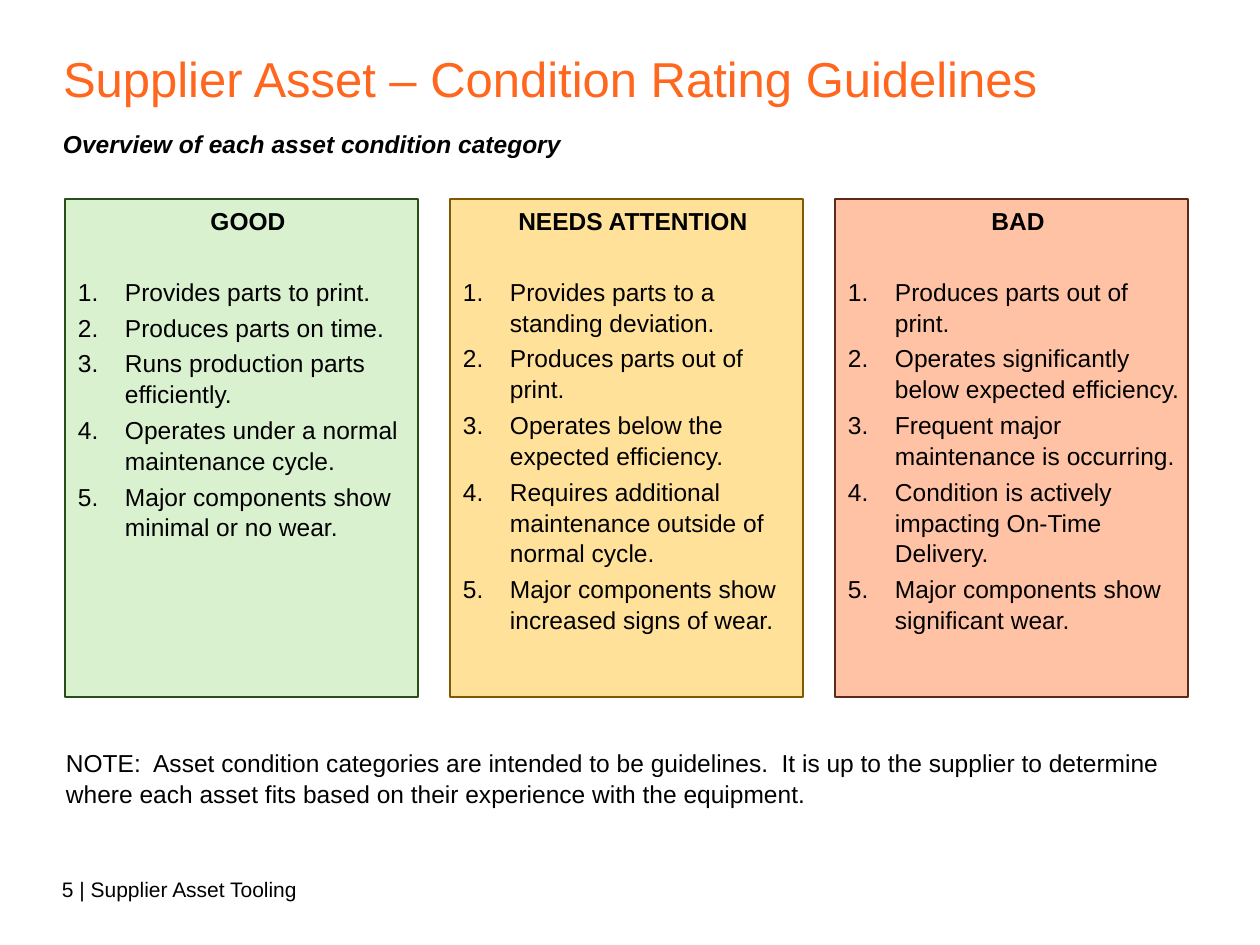
import pptx
import pptx.util
import pptx.dml.color
import pptx.enum.shapes
import pptx.enum.text
import pptx.oxml.ns
import lxml.etree

PX = 914400 / 126
ALIGN = pptx.enum.text.PP_ALIGN
COLORS = {
    "title": "FF671F", "text": "000000",
    "good": "DAF1D0", "good_line": "284F18",
    "attention": "FFE199", "attention_line": "805A00",
    "bad": "FFC2A5", "bad_line": "602818",
}
TEXT_INSETS = (0, 6, 13, 6)
CARD_INSETS = (13, 6, 0, 6)
CARD_LEFT, CARD_STEP = 65, 385
HANGING = 47
BODY = {"size": 14, "color": "text"}
HEADING = {**BODY, "bold": True}
CARDS = [
    ("GOOD", "good", 1.5, [
        "Provides parts to print.",
        "Produces parts on time.",
        "Runs production parts efficiently.",
        "Operates under a normal maintenance cycle.",
        "Major components show minimal or no wear.",
    ]),
    ("NEEDS ATTENTION", "attention", 1.25, [
        "Provides parts to a standing deviation.",
        "Produces parts out of print.",
        "Operates below the expected efficiency.",
        "Requires additional maintenance outside of normal cycle.",
        "Major components show increased signs of wear.",
    ]),
    ("BAD", "bad", 1.25, [
        "Produces parts out of print.",
        "Operates significantly below expected efficiency.",
        "Frequent major maintenance is occurring.",
        "Condition is actively impacting On-Time Delivery.",
        "Major components show significant wear.",
    ]),
]


def px(n):
    """Turn pixels into EMU."""
    return pptx.util.Emu(round(n * PX))


def rgb(name):
    """Return a named colour."""
    return pptx.dml.color.RGBColor.from_string(COLORS[name])


def place(sp, box):
    """Move and size a shape."""
    for name, value in zip(("left", "top", "width", "height"), box):
        setattr(sp, name, px(value))


def set_frame(sp, insets):
    """Set wrapping, anchor and insets of a shape's text."""
    tf = sp.text_frame
    values = {
        "word_wrap": True,
        "auto_size": pptx.enum.text.MSO_AUTO_SIZE.NONE,
        "vertical_anchor": pptx.enum.text.MSO_ANCHOR.TOP,
    }
    sides = ("left", "top", "right", "bottom")
    values.update({f"margin_{side}": px(n) for side, n in zip(sides, insets)})
    for name, value in values.items():
        setattr(tf, name, value)
    return tf


def set_bullet(p, numbered):
    """Give a paragraph a number with a hanging indent, or no bullet."""
    pPr = p._p.get_or_add_pPr()
    indent = px(HANGING) if numbered else 0
    pPr.set("marL", str(indent))
    pPr.set("indent", str(-indent))
    tag = "a:buAutoNum" if numbered else "a:buNone"
    bullet = lxml.etree.SubElement(pPr, pptx.oxml.ns.qn(tag))
    if numbered:
        bullet.set("type", "arabicPeriod")


def write(p, text, style, align=ALIGN.LEFT, before=0, spacing=1.05, numbered=False):
    """Fill a paragraph with one formatted run."""
    set_bullet(p, numbered)
    values = {"alignment": align, "space_before": pptx.util.Pt(before),
              "line_spacing": spacing}
    for name, value in values.items():
        setattr(p, name, value)
    r = p.add_run()
    r.text = text
    font = {"name": "Arial", "size": pptx.util.Pt(style["size"]),
            "bold": style.get("bold", False), "italic": style.get("italic", False)}
    for name, value in font.items():
        setattr(r.font, name, value)
    r.font.color.rgb = rgb(style["color"])


def add_title(s, text, box):
    """Fill the title placeholder."""
    sp = s.shapes.title
    place(sp, box)
    tf = set_frame(sp, TEXT_INSETS)
    write(tf.paragraphs[0], text, {"size": 28, "color": "title"}, spacing=1.0)


def add_text(s, text, box, style, spacing=1.05):
    """Add a text box with one paragraph."""
    sp = s.shapes.add_textbox(*map(px, box))
    tf = set_frame(sp, TEXT_INSETS)
    write(tf.paragraphs[0], text, style, spacing=spacing)


def fill_card(sp, box, heading, color, line_width, items):
    """Turn a shape into a coloured card with a heading and a numbered list."""
    place(sp, box)
    sp.fill.solid()
    sp.fill.fore_color.rgb = rgb(color)
    sp.line.color.rgb = rgb(f"{color}_line")
    sp.line.width = pptx.util.Pt(line_width)
    tf = set_frame(sp, CARD_INSETS)
    write(tf.paragraphs[0], heading, HEADING, align=ALIGN.CENTER)
    for i, item in enumerate(items):
        before = 2.8 if i else 22.6
        write(tf.add_paragraph(), item, BODY, before=before, numbered=True)


def main():
    """Build the slide."""
    prs = pptx.Presentation()
    prs.slide_width, prs.slide_height = px(1260), px(945)
    s = prs.slides.add_slide(prs.slide_layouts[3])
    add_title(s, "Supplier Asset – Condition Rating Guidelines", (63, 42, 1134, 80))
    add_text(s, "Overview of each asset condition category", (63, 122, 1134, 57),
             {**HEADING, "italic": True})
    rect = s.shapes.add_shape(pptx.enum.shapes.MSO_SHAPE.RECTANGLE, 0, 0, 0, 0)
    rect.shadow.inherit = False
    shapes = [s.placeholders[1], s.placeholders[2], rect]
    for i, (sp, card) in enumerate(zip(shapes, CARDS)):
        fill_card(sp, (CARD_LEFT + i * CARD_STEP, 199, 353, 498), *card)
    add_text(s, "NOTE:  Asset condition categories are intended to be guidelines.  "
             "It is up to the supplier to determine where each asset fits based on "
             "their experience with the equipment.", (66, 741, 1134, 74), BODY)
    add_text(s, "5 | Supplier Asset Tooling", (62, 871, 843, 52),
             {"size": 12, "color": "text"}, spacing=1.0)
    prs.save("out.pptx")


if __name__ == "__main__":
    main()
